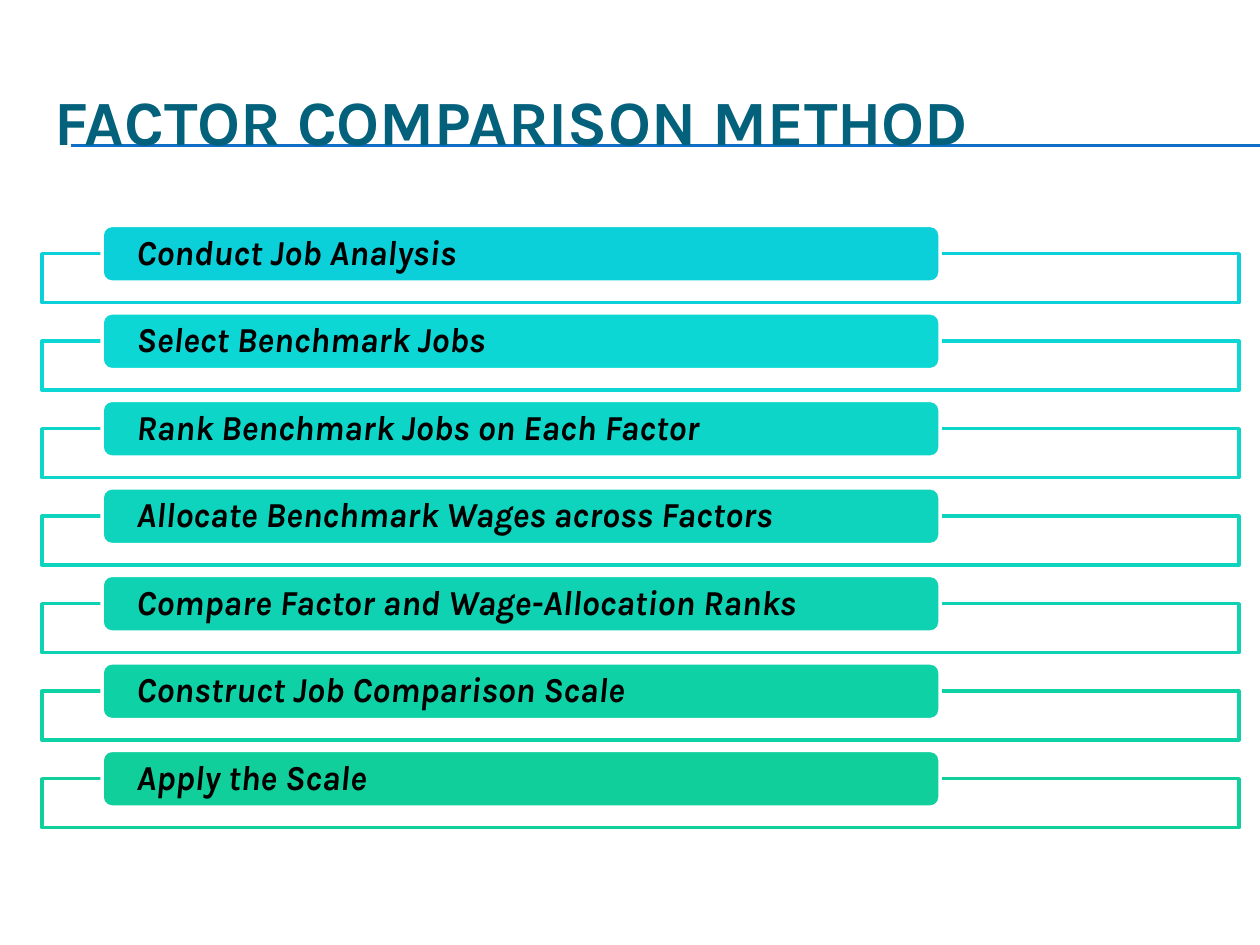
from lxml.etree import SubElement
from pptx import Presentation
from pptx.dml.color import RGBColor
from pptx.enum.shapes import MSO_CONNECTOR, MSO_SHAPE
from pptx.enum.text import MSO_ANCHOR, PP_ALIGN
from pptx.oxml.ns import qn
from pptx.util import Pt

STEPS = [
    ("Conduct Job Analysis", "0BD0D9"),
    ("Select Benchmark Jobs", "0CD7D5"),
    ("Rank Benchmark Jobs on Each Factor", "0DD6C9"),
    ("Allocate Benchmark Wages across Factors", "0ED4BD"),
    ("Compare Factor and Wage-Allocation Ranks", "0ED2B2"),
    ("Construct Job Comparison Scale", "0FD1A6"),
    ("Apply the Scale", "10CF9B"),
]
STEP_TOP, STEP_PITCH = 128.8, 50


def rgb(color):
    """Turn a hex string into a colour."""
    return RGBColor.from_string(color)


def write(tf, text, size, color, italic=False, spacing=1.0, inset=7.2):
    """Write one bold, left-aligned line, centred vertically in its frame."""
    tf.word_wrap = True
    tf.vertical_anchor = MSO_ANCHOR.MIDDLE
    tf.margin_left = tf.margin_right = Pt(inset)
    tf.margin_top = tf.margin_bottom = Pt(0)
    p = tf.paragraphs[0]
    p.alignment = PP_ALIGN.LEFT
    p.line_spacing = spacing
    r = p.add_run()
    r.text = text
    r.font.name = "Karla"
    r.font.size = Pt(size)
    r.font.bold = True
    r.font.italic = italic
    r.font.color.rgb = rgb(color)


def add_rule(s, y):
    """Draw a thin rule from the title to the right edge of the slide."""
    line = s.shapes.add_connector(MSO_CONNECTOR.STRAIGHT, Pt(40.5), Pt(y), Pt(720), Pt(y))
    line.line.color.rgb = rgb("0F6FC6")
    line.line.width = Pt(0.75)
    SubElement(line._element.spPr, qn("a:effectLst"))


def add_box(s, kind, x, y, w, h, fill, line):
    """Add a filled shape with a two-point outline."""
    sp = s.shapes.add_shape(kind, Pt(x), Pt(y), Pt(w), Pt(h))
    sp.shadow.inherit = False
    sp.fill.solid()
    sp.fill.fore_color.rgb = rgb(fill)
    sp.line.color.rgb = rgb(line)
    sp.line.width = Pt(2)
    return sp


def add_step(s, y, text, color):
    """Add an outlined frame with a labelled bar on its top edge."""
    frame = add_box(s, MSO_SHAPE.RECTANGLE, 24, y + 16.2, 684, 28, "FFFFFF", color)
    white = frame._element.spPr.find(qn("a:solidFill"))[0]
    SubElement(white, qn("a:alpha"), val="90000")
    bar = add_box(s, MSO_SHAPE.ROUNDED_RECTANGLE, 58.4, y, 478.8, 32.4, color, "FFFFFF")
    write(bar.text_frame, text, 20, "000000", italic=True, spacing=0.9, inset=18)


def add_title(s, text):
    """Place the title in front of the rules."""
    sp = s.shapes.title
    sp.left, sp.top, sp.width, sp.height = Pt(24), Pt(36), Pt(684), Pt(66)
    write(sp.text_frame, text, 36, "04617B")
    s.shapes._spTree.append(sp._element)


def main():
    """Build the slide and save it."""
    prs = Presentation()
    prs.slide_width, prs.slide_height = Pt(720), Pt(540)
    s = prs.slides.add_slide(prs.slide_layouts[5])
    for y in (82.8, 83.5):
        add_rule(s, y)
    add_title(s, "FACTOR COMPARISON METHOD")
    for i, (text, color) in enumerate(STEPS):
        add_step(s, STEP_TOP + i * STEP_PITCH, text, color)
    prs.save("out.pptx")


if __name__ == "__main__":
    main()
